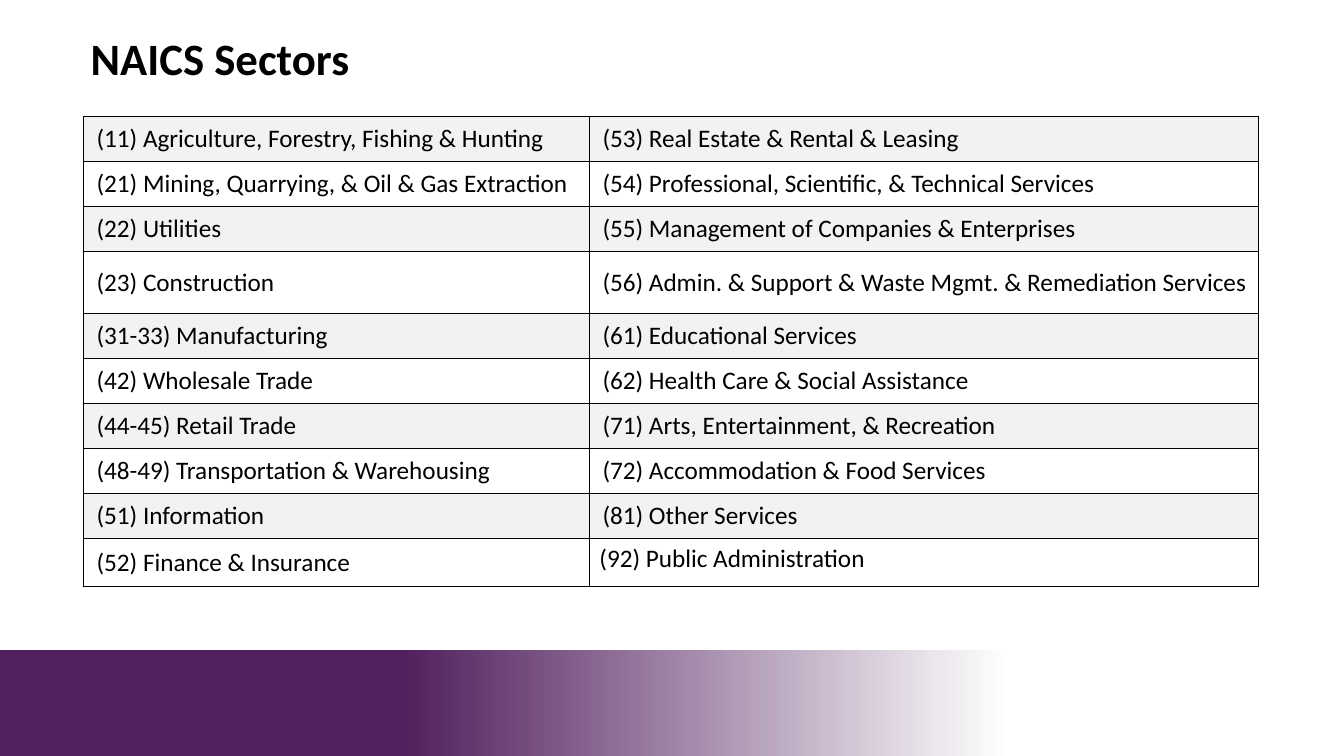
from lxml import etree
from pptx import Presentation
from pptx import util as u
from pptx.dml import color
from pptx.enum import shapes, text
from pptx.oxml import ns

Pt = u.Pt

SECTORS = [
    ("(11) Agriculture, Forestry, Fishing & Hunting", "(53) Real Estate & Rental & Leasing"),
    ("(21) Mining, Quarrying, & Oil & Gas Extraction", "(54) Professional, Scientific, & Technical Services"),
    ("(22) Utilities", "(55) Management of Companies & Enterprises"),
    ("(23) Construction", "(56) Admin. & Support & Waste Mgmt. & Remediation Services"),
    ("(31-33) Manufacturing", "(61) Educational Services"),
    ("(42) Wholesale Trade", "(62) Health Care & Social Assistance"),
    ("(44-45) Retail Trade", "(71) Arts, Entertainment, & Recreation"),
    ("(48-49) Transportation & Warehousing", "(72) Accommodation & Food Services"),
    ("(51) Information", "(81) Other Services"),
    ("(52) Finance & Insurance", "(92) Public Administration"),
]


def rgb(hex_code):
    return color.RGBColor.from_string(hex_code)


class SectorSlide:
    FONT = "Calibri"
    BLACK, WHITE, PURPLE, STRIPE = "000000", "FFFFFF", "51205E", "F2F2F2"

    def __init__(self, deck):
        self.slide = deck.slides.add_slide(deck.slide_layouts[5])

    def add_run(self, paragraph, words, size, bold=False):
        run = paragraph.add_run()
        run.text = words
        run.font.name, run.font.size, run.font.bold = self.FONT, Pt(size), bold
        run.font.color.rgb = rgb(self.BLACK)

    def band(self, left, top, width, height):
        band = self.slide.shapes.add_shape(
            shapes.MSO_SHAPE.RECTANGLE, Pt(left), Pt(top), Pt(width), Pt(height))
        band.shadow.inherit = False
        band.line.fill.background()
        band.fill.gradient()
        band.fill.gradient_angle = 0
        fade = [(0.3, self.PURPLE), (0.75, self.WHITE)]
        for stop, (position, shade) in zip(band.fill.gradient_stops, fade):
            stop.position = position
            stop.color.rgb = rgb(shade)

    def title(self, words, left, top, width, height):
        heading = self.slide.shapes.title
        heading.left, heading.top = Pt(left), Pt(top)
        heading.width, heading.height = Pt(width), Pt(height)
        frame = heading.text_frame
        frame.vertical_anchor = text.MSO_ANCHOR.MIDDLE
        line = frame.paragraphs[0]
        line.alignment = text.PP_ALIGN.LEFT
        line.line_spacing = 0.9
        self.add_run(line, words, 32, bold=True)

    def borders(self, cell):
        properties = cell._tc.get_or_add_tcPr()
        for side in ("a:lnL", "a:lnR", "a:lnT", "a:lnB"):
            edge = etree.SubElement(properties, ns.qn(side), w=str(Pt(1)))
            solid = etree.SubElement(edge, ns.qn("a:solidFill"))
            etree.SubElement(solid, ns.qn("a:srgbClr"), val=self.BLACK)

    def cell(self, cell, words, striped, margins, anchor):
        cell.margin_left, cell.margin_top, cell.margin_right, cell.margin_bottom = map(Pt, margins)
        cell.vertical_anchor = anchor
        self.borders(cell)
        if striped:
            cell.fill.solid()
            cell.fill.fore_color.rgb = rgb(self.STRIPE)
        else:
            cell.fill.background()
        self.add_run(cell.text_frame.paragraphs[0], words, 18)

    def table(self, rows, left, top, widths, heights):
        table = self.slide.shapes.add_table(
            len(rows), len(widths), Pt(left), Pt(top), Pt(sum(widths)), Pt(sum(heights))).table
        table.first_row = table.horz_banding = False
        for column, width in zip(table.columns, widths):
            column.width = Pt(width)
        for row, height in zip(table.rows, heights):
            row.height = Pt(height)
        for r, sectors in enumerate(rows):
            for c, sector in enumerate(sectors):
                # The closing cell sits at the top with wider margins
                last = (r, c) == (len(rows) - 1, len(widths) - 1)
                margins = (7.2, 3.6, 7.2, 3.6) if last else (9.4, 0, 0, 0)
                anchor = text.MSO_ANCHOR.TOP if last else text.MSO_ANCHOR.MIDDLE
                self.cell(table.cell(r, c), sector, r % 2 == 0, margins, anchor)


def main():
    deck = Presentation()
    deck.slide_width, deck.slide_height = Pt(960), Pt(540)
    page = SectorSlide(deck)

    # Footer band
    page.band(0, 464.4, 960, 75.6)

    # Heading
    page.title("NAICS Sectors", 57.6, 10.8, 851.8, 65.5)

    # Sector table: even rows, with a taller fourth and last
    heights = [32.14] * len(SECTORS)
    heights[3], heights[-1] = 44.2, 34.4
    page.table(SECTORS, 59.6, 83.4, [361.4, 478], heights)

    deck.save("out.pptx")


if __name__ == "__main__":
    main()
